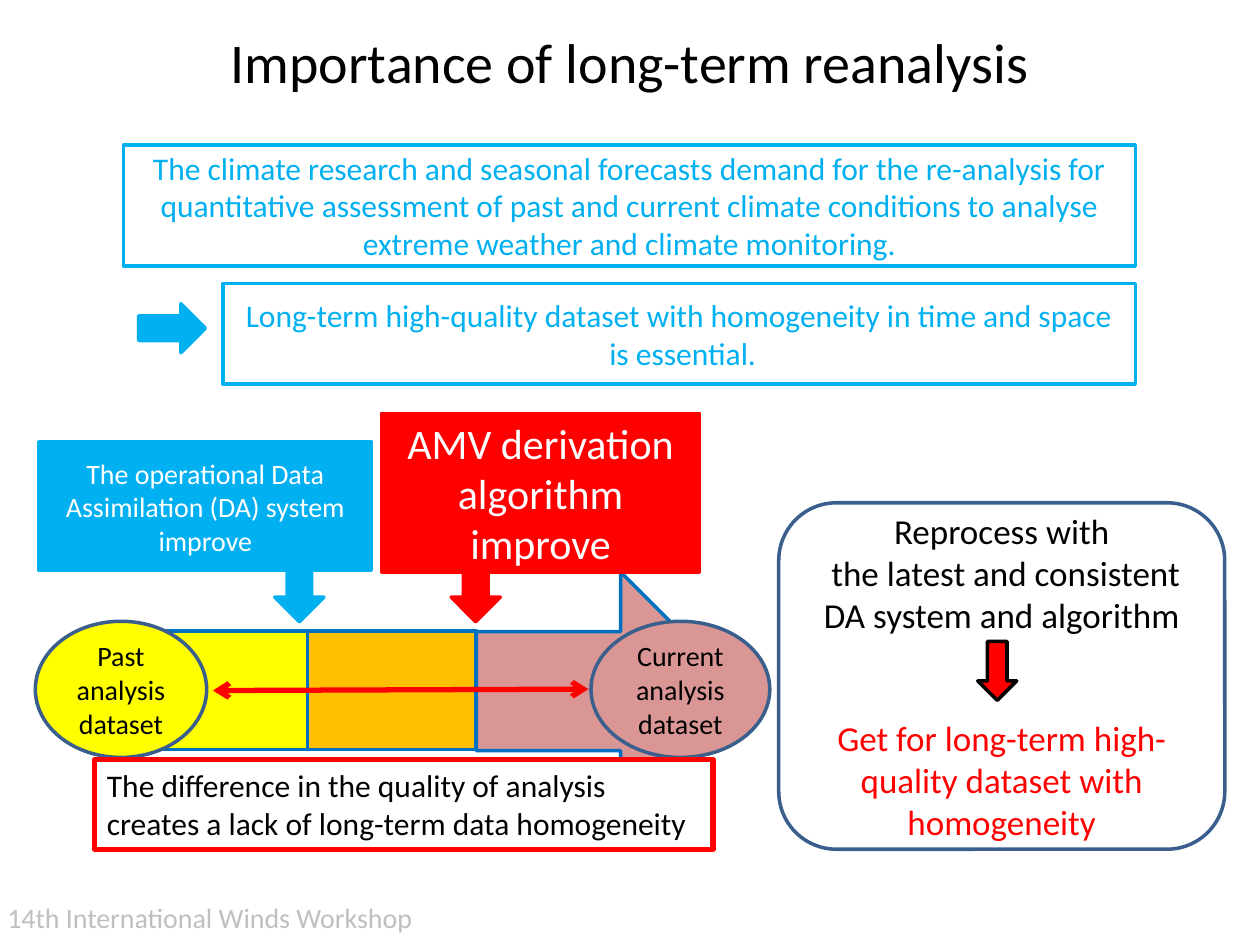
from lxml.etree import SubElement
from pptx import Presentation
from pptx.dml.color import RGBColor
from pptx.enum.shapes import MSO_CONNECTOR, MSO_SHAPE
from pptx.enum.text import MSO_ANCHOR, PP_ALIGN
from pptx.oxml.ns import qn
from pptx.util import Pt

SKY, RED, BLUE, NAVY = "00B0F0", "FF0000", "0070C0", "3A5F8C"
YELLOW, ORANGE, ROSE = "FFFF00", "FFC000", "D99694"
WHITE, BLACK, GREY = "FFFFFF", "000000", "BFBFBF"


def paint(target, color):
    target.rgb = RGBColor.from_string(color)


def write(shape, lines, size, color, align=PP_ALIGN.CENTER,
          anchor=MSO_ANCHOR.MIDDLE, wrap=True):
    frame = shape.text_frame
    frame.word_wrap = wrap
    frame.vertical_anchor = anchor
    frame.text = "\n".join(lines)
    for para in frame.paragraphs:
        para.alignment = align
        for run in para.runs:
            run.font.size = Pt(size)
            run.font.name = "Calibri"
            paint(run.font.color, color)


def add_form(slide, kind, box, fill, line, width=2):
    shape = slide.shapes.add_shape(kind, *map(Pt, box))
    shape.shadow.inherit = False
    shape.fill.solid()
    paint(shape.fill.fore_color, fill)
    paint(shape.line.color, line)
    shape.line.width = Pt(width)
    return shape


def add_label(slide, box, text, size, color, **style):
    label = slide.shapes.add_textbox(*map(Pt, box))
    write(label, [text], size, color, **style)


def add_arrow(slide, start, end, color, width):
    line = slide.shapes.add_connector(
        MSO_CONNECTOR.STRAIGHT, *map(Pt, start + end))
    paint(line.line.color, color)
    line.line.width = Pt(width)
    props = line.line._get_or_add_ln()
    for tag in ("a:headEnd", "a:tailEnd"):
        SubElement(props, qn(tag), type="arrow")
    SubElement(line._element.spPr, qn("a:effectLst"))


def main():
    deck = Presentation()
    deck.slide_width, deck.slide_height = Pt(720), Pt(540)
    slide = deck.slides.add_slide(deck.slide_layouts[6])
    rect, oval = MSO_SHAPE.RECTANGLE, MSO_SHAPE.OVAL
    down, right = MSO_SHAPE.DOWN_ARROW, MSO_SHAPE.RIGHT_ARROW

    # Title and the two statements
    add_label(slide, (36, 15, 648, 40), "Importance of long-term reanalysis",
              32, BLACK)
    claims = [
        ((70.6, 82.8, 578.2, 69.1),
         ["The climate research and seasonal forecasts demand for the "
          "re-analysis for quantitative assessment of past and current "
          "climate conditions to analyse extreme weather and climate "
          "monitoring."]),
        ((127.4, 162, 521.4, 57.6),
         ["Long-term high-quality dataset with homogeneity in time and space",
          " is essential."]),
    ]
    for box, lines in claims:
        write(add_form(slide, rect, box, WHITE, SKY), lines, 18, SKY)
    add_form(slide, right, (79.2, 173.5, 38.2, 28.1), SKY, SKY)

    # Timeline arrow and the two improvements pointing at it
    add_form(slide, right, (272.2, 326.9, 150.5, 136.1), ROSE, BLUE)
    causes = [
        ((22.3, 252.7, 190.1, 73.4), 157, SKY, 16,
         "The operational Data Assimilation (DA) system"),
        ((218.2, 236.2, 181.4, 90.7), 257.8, RED, 24,
         "AMV derivation algorithm"),
    ]
    for box, left, color, size, text in causes:
        cause = add_form(slide, rect, box, color, color)
        write(cause, [text, "improve"], size, WHITE)
        add_form(slide, down, (left, 327.2, 28.1, 28.1), color, color)

    # Timeline stages
    for left, width, color in ((64.8, 110.9, YELLOW), (175.7, 96.5, ORANGE)):
        add_form(slide, rect, (left, 360.7, width, 67.7), color, BLUE)
    for left, width, color, text in (
            (20.2, 97.9, YELLOW, "Past analysis dataset"),
            (337.7, 102.2, ROSE, "Current analysis dataset")):
        stage = add_form(slide, oval, (left, 355, width, 77.8), color, NAVY)
        write(stage, [text], 16, BLACK)
    add_arrow(slide, (121.7, 394.6), (336.2, 393.8), RED, 3)

    # Consequence
    gap = add_form(slide, rect, (54, 434.2, 353.5, 51.1), WHITE, RED, 3)
    write(gap, ["The difference in the quality of analysis",
                "creates a lack of long-term data homogeneity"],
          18, BLACK, PP_ALIGN.LEFT, MSO_ANCHOR.TOP, False)

    # Reprocessing panel
    panel = add_form(slide, MSO_SHAPE.ROUNDED_RECTANGLE,
                     (445, 287.3, 254.9, 198), WHITE, NAVY)
    write(panel, ["Reprocess with",
                  " the latest and consistent DA system and algorithm",
                  "Get for long-term high-quality dataset with homogeneity"],
          20, BLACK)
    goal = panel.text_frame.paragraphs[-1]
    goal.space_before = Pt(46)
    paint(goal.runs[0].font.color, RED)
    add_form(slide, down, (558.7, 366.5, 22.3, 33.8), RED, BLACK)

    # Footer
    add_label(slide, (-2.9, 511.2, 292.3, 28.8),
              "14th International Winds Workshop", 16, GREY,
              align=PP_ALIGN.LEFT, anchor=MSO_ANCHOR.TOP)

    deck.save("out.pptx")


if __name__ == "__main__":
    main()
